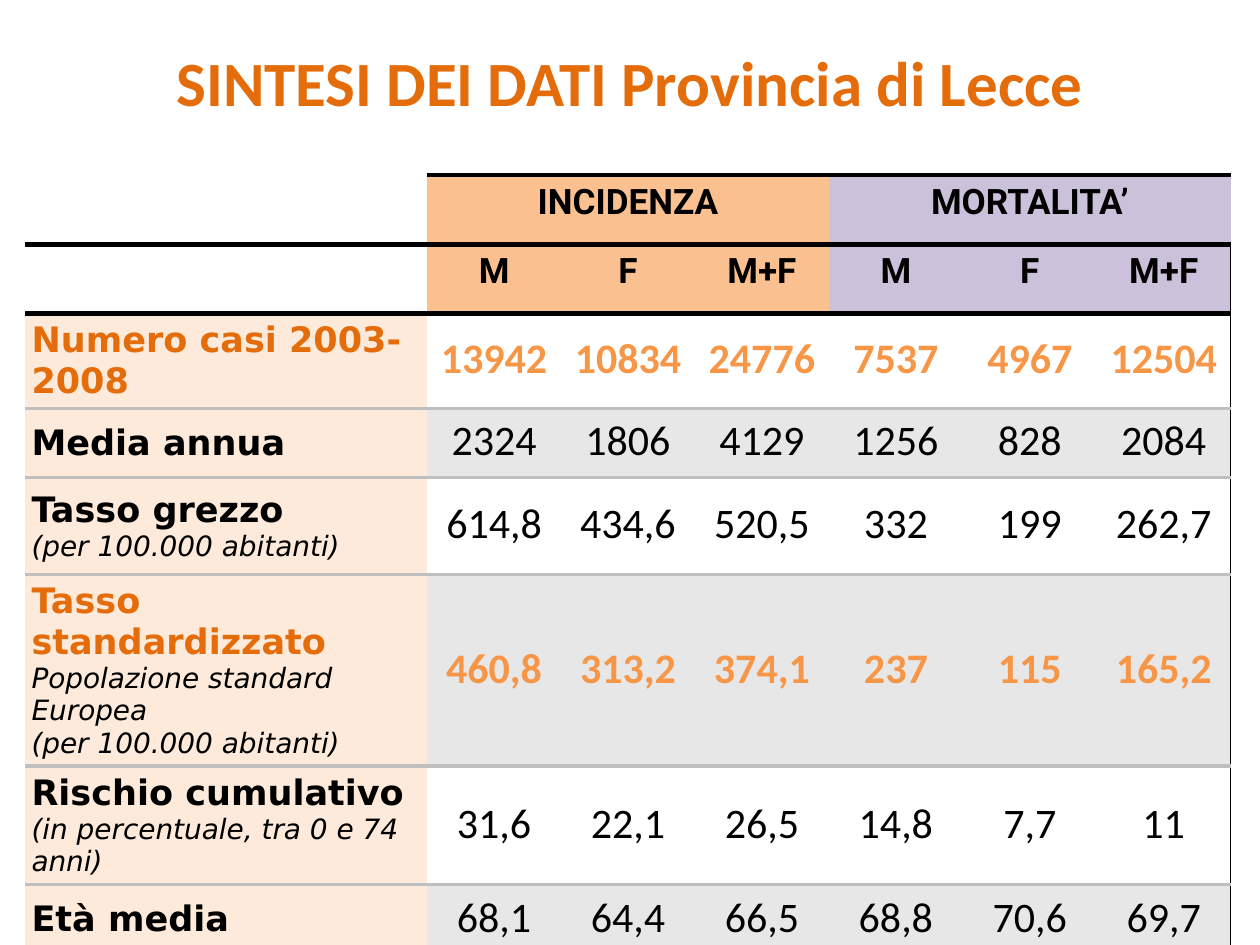
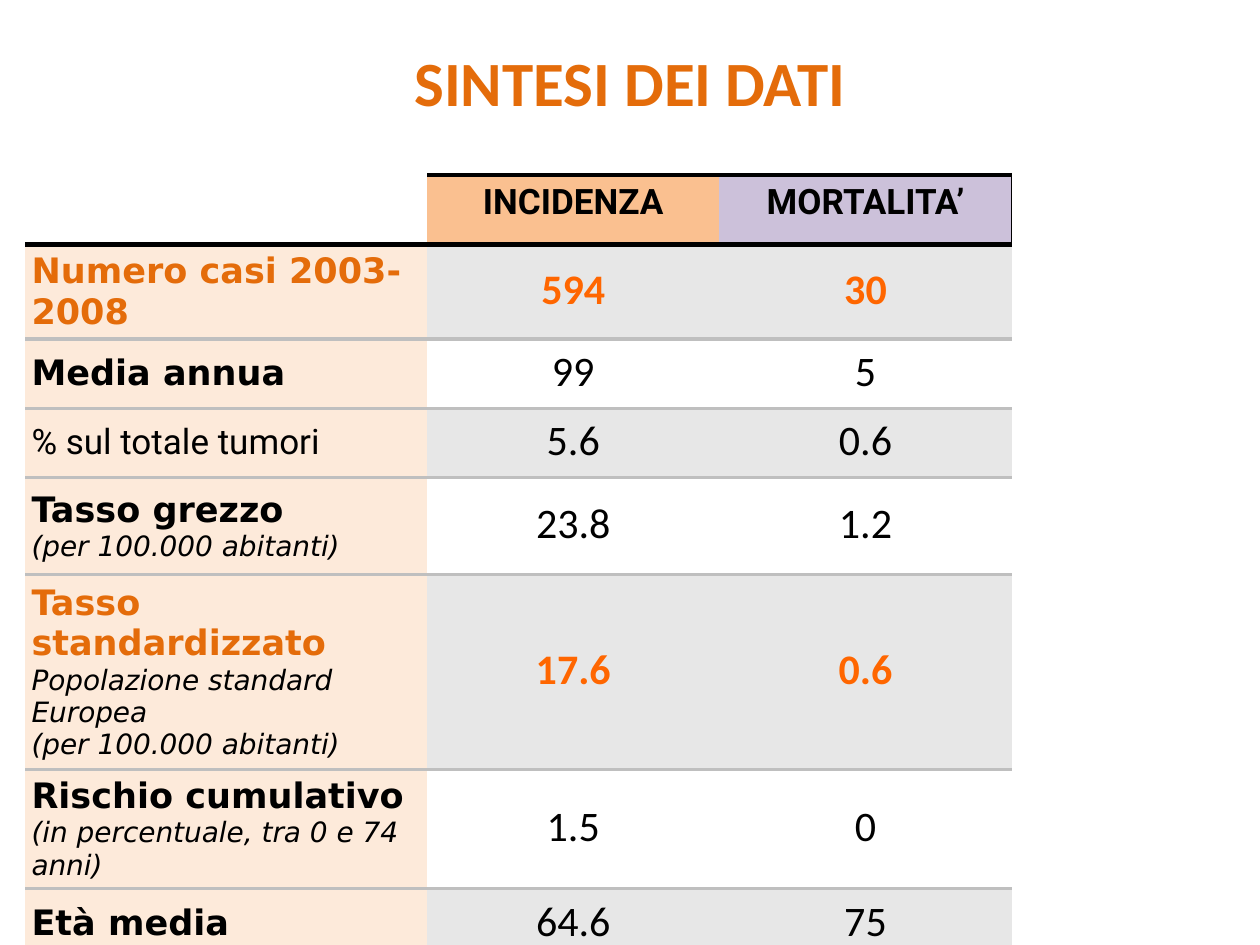
from lxml.etree import SubElement
from pptx import Presentation
from pptx.dml.color import RGBColor
from pptx.enum.text import MSO_ANCHOR, PP_ALIGN
from pptx.oxml.ns import qn
from pptx.util import Inches, Pt

ORANGE = "E46C0A"
BLACK = "000000"
WHITE = "FFFFFF"
GREY = "E7E7E7"
LABEL_FILL = "FDEADA"
INCIDENCE_FILL = "FAC090"
MORTALITY_FILL = "CCC1DA"
HEAVY_LINE = (BLACK, 3)
ROW_LINE = ("BFBFBF", 2.25)
EDGE_LINE = (BLACK, 1)
LABEL_WIDTH = 3.19
ROW_HEIGHT = 0.55

CASES = "Numero casi 2003-2008"
MEAN = "Media annua"
SHARE = "% sul totale tumori"
CRUDE_RATE = "Tasso grezzo\n(per 100.000 abitanti)"
STANDARD_RATE = "Tasso standardizzato\nPopolazione standard Europea\n(per 100.000 abitanti)"
RISK = "Rischio cumulativo\n(in percentuale, tra 0 e 74 anni)"
AGE = "Età media"
HIGHLIGHTED = (CASES, STANDARD_RATE)
TALL_ROWS = {CASES: 0.75, CRUDE_RATE: 0.77, STANDARD_RATE: 1.52, RISK: 0.94}

PROVINCE_ROWS = [
    (CASES, ["13942", "10834", "24776", "7537", "4967", "12504"]),
    (MEAN, ["2324", "1806", "4129", "1256", "828", "2084"]),
    (CRUDE_RATE, ["614,8", "434,6", "520,5", "332", "199", "262,7"]),
    (STANDARD_RATE, ["460,8", "313,2", "374,1", "237", "115", "165,2"]),
    (RISK, ["31,6", "22,1", "26,5", "14,8", "7,7", "11"]),
    (AGE, ["68,1", "64,4", "66,5", "68,8", "70,6", "69,7"]),
]
SUMMARY_ROWS = [
    (CASES, ["594", "30"]),
    (MEAN, ["99", "5"]),
    (SHARE, ["5.6", "0.6"]),
    (CRUDE_RATE, ["23.8", "1.2"]),
    (STANDARD_RATE, ["17.6", "0.6"]),
    (RISK, ["1.5", "0"]),
    (AGE, ["64.6", "75"]),
]


def color(value):
    return RGBColor.from_string(value)


def format_paragraph(paragraph, font_name, size, text_color=BLACK, bold=False, italic=False):
    for run in paragraph.runs:
        run.font.name = font_name
        run.font.size = Pt(size)
        run.font.color.rgb = color(text_color)
        run.font.bold = bold
        run.font.italic = italic


def set_borders(cell, **lines):
    properties = cell._tc.get_or_add_tcPr()
    for side in ("left", "right", "top", "bottom"):
        border = SubElement(properties, qn("a:ln" + side[0].upper()))
        line = lines.get(side)
        if line:
            line_color, width = line
            border.set("w", str(Pt(width)))
            fill = SubElement(border, qn("a:solidFill"))
            SubElement(fill, qn("a:srgbClr")).set("val", line_color)
        else:
            SubElement(border, qn("a:noFill"))


def set_fill(cell, fill_color):
    cell.fill.solid()
    cell.fill.fore_color.rgb = color(fill_color)


def set_margins(cell, side, top, bottom):
    cell.margin_left = cell.margin_right = Inches(side)
    cell.margin_top = Inches(top)
    cell.margin_bottom = Inches(bottom)


def write_header(cell, text, fill_color):
    set_fill(cell, fill_color)
    set_margins(cell, 0.05, 0.05, 0.05)
    cell.text_frame.text = text
    paragraph = cell.text_frame.paragraphs[0]
    paragraph.alignment = PP_ALIGN.CENTER
    paragraph.space_before = Pt(4)
    format_paragraph(paragraph, "Roboto", 20, bold=True)


def write_label(cell, text):
    set_fill(cell, LABEL_FILL)
    set_margins(cell, 0.05, 0.04, 0.04)
    cell.vertical_anchor = MSO_ANCHOR.MIDDLE
    cell.text_frame.text = text
    heading, *notes = cell.text_frame.paragraphs
    if text == SHARE:
        format_paragraph(heading, "Roboto", 20)
    else:
        heading_color = ORANGE if text in HIGHLIGHTED else BLACK
        format_paragraph(heading, "DejaVu Sans", 20, heading_color, bold=True)
    for note in notes:
        format_paragraph(note, "DejaVu Sans", 16, italic=True)


def write_value(cell, text, fill_color, text_color, bold):
    set_fill(cell, fill_color)
    set_margins(cell, 0.01, 0.01, 0)
    cell.vertical_anchor = MSO_ANCHOR.MIDDLE
    cell.text_frame.text = text
    paragraph = cell.text_frame.paragraphs[0]
    paragraph.alignment = PP_ALIGN.CENTER
    paragraph.line_spacing = 0.8
    paragraph.space_before = Pt(4.8)
    format_paragraph(paragraph, "Calibri", 24, text_color, bold)


def add_title(slide, text):
    title = slide.shapes.add_textbox(Inches(0.5), Inches(0.21), Inches(9), Inches(0.87))
    text_frame = title.text_frame
    text_frame.word_wrap = True
    text_frame.vertical_anchor = MSO_ANCHOR.MIDDLE
    text_frame.text = text
    paragraph = text_frame.paragraphs[0]
    paragraph.alignment = PP_ALIGN.CENTER
    format_paragraph(paragraph, "Calibri", 36, ORANGE, bold=True)


def draw_table_lines(table, header_count, body_edge):
    last_column = len(table.columns) - 1
    for row_index, row in enumerate(table.rows):
        in_header = row_index < header_count
        for column, cell in enumerate(row.cells):
            corner = row_index == 0 and column == 0
            top = HEAVY_LINE if row_index <= header_count else ROW_LINE
            has_edge = column == last_column and (in_header or body_edge)
            set_borders(
                cell,
                top=None if corner else top,
                bottom=HEAVY_LINE if in_header else ROW_LINE,
                right=EDGE_LINE if has_edge else None,
            )


def add_data_table(slide, width, rows, subheaders, highlight_color, body_edge):
    value_count = len(rows[0][1])
    group_size = value_count // 2
    header_count = 2 if subheaders else 1
    heights = [ROW_HEIGHT] * header_count
    heights += [TALL_ROWS.get(label, ROW_HEIGHT) for label, values in rows]
    frame = slide.shapes.add_table(
        len(heights), value_count + 1,
        Inches(0.2), Inches(1.39), Inches(width), Inches(sum(heights)),
    )
    table = frame.table
    table.first_row = False
    table.horz_banding = False
    for row, height in zip(table.rows, heights):
        row.height = Inches(height)
    table.columns[0].width = Inches(LABEL_WIDTH)
    for column in range(1, value_count + 1):
        table.columns[column].width = Inches((width - LABEL_WIDTH) / value_count)
    draw_table_lines(table, header_count, body_edge)

    for row_index in range(header_count):
        table.cell(row_index, 0).fill.background()
    groups = [("INCIDENZA", INCIDENCE_FILL), ("MORTALITA’", MORTALITY_FILL)]
    for group_index, (name, fill_color) in enumerate(groups):
        first = 1 + group_index * group_size
        write_header(table.cell(0, first), name, fill_color)
        if group_size > 1:
            table.cell(0, first).merge(table.cell(0, first + group_size - 1))
        for offset, subheader in enumerate(subheaders):
            write_header(table.cell(1, first + offset), subheader, fill_color)

    for row_index, (label, values) in enumerate(rows, header_count):
        write_label(table.cell(row_index, 0), label)
        highlighted = label in HIGHLIGHTED
        text_color = highlight_color if highlighted else BLACK
        fill_color = GREY if row_index % 2 else WHITE
        for column, value in enumerate(values, 1):
            write_value(table.cell(row_index, column), value, fill_color, text_color, highlighted)


def add_blank_slide(presentation):
    return presentation.slides.add_slide(presentation.slide_layouts[6])


def main():
    presentation = Presentation()
    presentation.slide_width = Inches(10)
    presentation.slide_height = Inches(7.5)

    slide = add_blank_slide(presentation)
    add_data_table(slide, 9.57, PROVINCE_ROWS, ["M", "F", "M+F"], "F79646", True)
    add_title(slide, "SINTESI DEI DATI Provincia di Lecce")

    slide = add_blank_slide(presentation)
    add_data_table(slide, 7.83, SUMMARY_ROWS, [], "FF6600", False)
    add_title(slide, "SINTESI DEI DATI")

    presentation.save("out.pptx")


if __name__ == "__main__":
    main()
